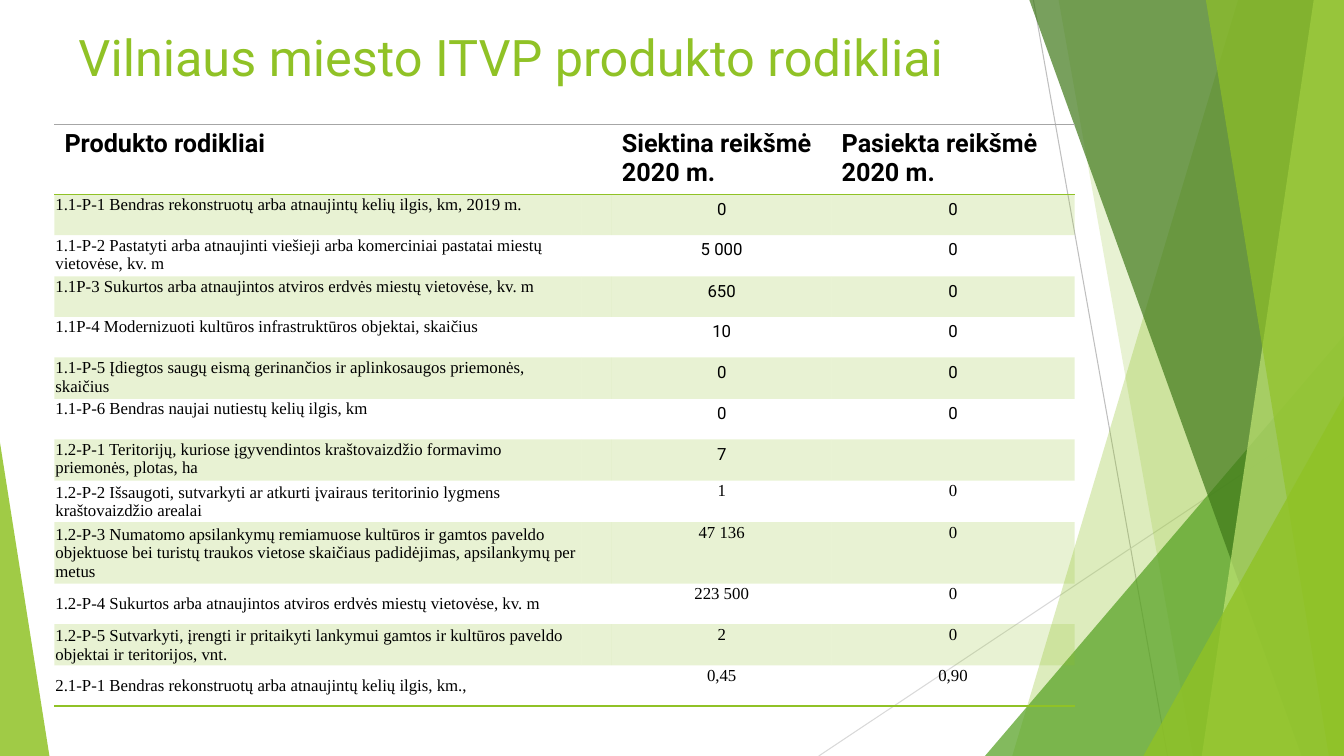
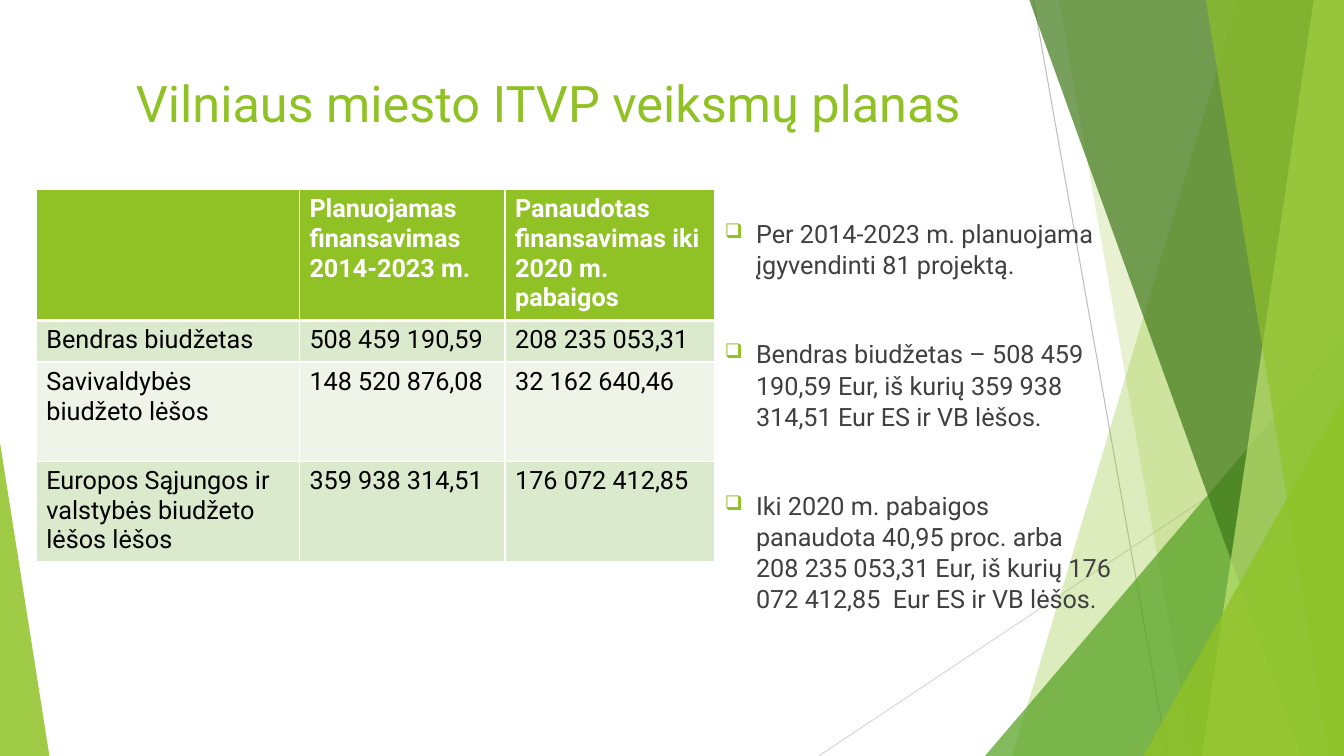
from lxml.etree import SubElement
from pptx import Presentation
from pptx.dml.color import RGBColor as Rgb
from pptx.enum.shapes import MSO_CONNECTOR as Connector, MSO_SHAPE as Preset
from pptx.enum.text import MSO_ANCHOR as Anchor, PP_ALIGN as Align
from pptx.oxml.ns import qn
from pptx.util import Inches, Pt

WIDTH, HEIGHT = Inches(13.33), Inches(7.5)
SANS, SERIF = "Roboto", "Times New Roman"
PLAIN_TABLE = "{2D5ABB26-0587-4C30-8999-92F81FD0307C}"
COLORS = {
    "lime": "90C226", "green": "54A021", "forest": "3F7819", "pale": "C0E474",
    "ray": "BFBFBF", "faint_ray": "D9D9D9", "rule": "A6A6A6",
    "body": "404040", "black": "000000", "white": "FFFFFF",
    "row_dark": "DBE9CD", "row_light": "EEF4E8",
}

INDICATOR_HEAD = ["Produkto rodikliai", "", "Siektina reikšmė 2020 m.", "Pasiekta reikšmė 2020 m."]
INDICATORS = [
    ("1.1-P-1 Bendras rekonstruotų arba atnaujintų kelių ilgis, km, 2019 m.", "0", "0"),
    ("1.1-P-2 Pastatyti arba atnaujinti viešieji arba komerciniai pastatai miestų vietovėse, kv. m", "5 000", "0"),
    ("1.1P-3 Sukurtos arba atnaujintos atviros erdvės miestų vietovėse, kv. m", "650", "0"),
    ("1.1P-4 Modernizuoti kultūros infrastruktūros objektai, skaičius", "10", "0"),
    ("1.1-P-5 Įdiegtos saugų eismą gerinančios ir aplinkosaugos priemonės, skaičius", "0", "0"),
    ("1.1-P-6 Bendras naujai nutiestų kelių ilgis, km", "0", "0"),
    ("1.2-P-1 Teritorijų, kuriose įgyvendintos kraštovaizdžio formavimo priemonės, plotas, ha", "7", ""),
    ("1.2-P-2 Išsaugoti, sutvarkyti ar atkurti įvairaus teritorinio lygmens kraštovaizdžio arealai", "1", "0"),
    ("1.2-P-3 Numatomo apsilankymų remiamuose kultūros ir gamtos paveldo objektuose bei turistų "
     "traukos vietose skaičiaus padidėjimas, apsilankymų per metus", "47 136", "0"),
    ("1.2-P-4 Sukurtos arba atnaujintos atviros erdvės miestų vietovėse, kv. m", "223 500", "0"),
    ("1.2-P-5 Sutvarkyti, įrengti ir pritaikyti lankymui gamtos ir kultūros paveldo objektai ir "
     "teritorijos, vnt.", "2", "0"),
    ("2.1-P-1 Bendras rekonstruotų arba atnaujintų kelių ilgis, km.,", "0,45", "0,90"),
]
SERIF_FROM, TALL_ROW = 8, 9

BUDGET = [
    ("", "Planuojamas finansavimas 2014-2023 m.", "Panaudotas finansavimas iki 2020 m. pabaigos"),
    ("Bendras biudžetas", "508 459 190,59", "208 235 053,31"),
    ("Savivaldybės biudžeto lėšos", "148 520 876,08", "32 162 640,46"),
    ("Europos Sąjungos ir valstybės biudžeto lėšos lėšos", "359 938 314,51", "176 072 412,85"),
]
FINDINGS = [
    "Per 2014-2023 m. planuojama įgyvendinti 81 projektą.",
    "Bendras biudžetas – 508 459 190,59 Eur, iš kurių 359 938 314,51 Eur ES ir VB lėšos.",
    "Iki 2020 m. pabaigos panaudota 40,95 proc. arba 208 235 053,31 Eur, iš kurių "
    "176 072 412,85  Eur ES ir VB lėšos.",
]


def across(percent):
    return round(WIDTH * percent / 100)


def down(percent):
    return round(HEIGHT * percent / 100)


def area(left, top, width, height):
    return across(left), down(top), across(width), down(height)


def color(name):
    return Rgb.from_string(COLORS[name])


def paint(fill, holder, name, opacity=100):
    fill.solid()
    fill.fore_color.rgb = color(name)
    if opacity < 100:
        tint = holder.find(qn("a:solidFill")).find(qn("a:srgbClr"))
        SubElement(tint, qn("a:alpha"), val=str(opacity * 1000))


def write(paragraph, text, size, name, font=SANS, bold=False):
    run = paragraph.add_run()
    run.text = text
    run.font.size, run.font.name, run.font.bold = Pt(size), font, bold
    run.font.color.rgb = color(name)


def facet(shape, name, opacity):
    shape.shadow.inherit = False
    shape.line.fill.background()
    paint(shape.fill, shape._element.spPr, name, opacity)


def ray(slide, start, end, name):
    line = slide.shapes.add_connector(
        Connector.STRAIGHT, across(start[0]), down(start[1]), across(end[0]), down(end[1]))
    line.line.color.rgb = color(name)
    line.line.width = Pt(0.75)
    SubElement(line._element.spPr, qn("a:effectLst"))


def band(slide, top_x, bottom_x, name, opacity):
    outline = slide.shapes.build_freeform(across(top_x), 0)
    outline.add_line_segments([(WIDTH, 0), (WIDTH, HEIGHT), (across(bottom_x), HEIGHT)], close=True)
    facet(outline.convert_to_shape(), name, opacity)


def corner(slide, left, top, width, apex, name, opacity):
    wedge = slide.shapes.add_shape(Preset.ISOSCELES_TRIANGLE, *area(left, top, width, 100 - top))
    wedge.adjustments[0] = apex
    facet(wedge, name, opacity)


def draw_backdrop(slide):
    ray(slide, (76.89, 0), (86.87, 100), "ray")
    ray(slide, (100, 53.73), (60.92, 100), "faint_ray")
    band(slide, 92.12, 75.32, "lime", 30)
    band(slide, 78.77, 88.75, "lime", 20)
    corner(slide, 73.29, 44.4, 26.71, 1, "green", 72)
    band(slide, 76.59, 96.85, "forest", 70)
    band(slide, 97.75, 89.42, "pale", 70)
    band(slide, 89.72, 98.87, "lime", 65)
    corner(slide, 85.07, 52.4, 14.93, 1, "lime", 80)
    corner(slide, 0, 58.53, 3.68, 0, "lime", 85)


def text_frame(slide, box):
    frame = slide.shapes.add_textbox(*area(*box)).text_frame
    frame.word_wrap = True
    return frame


def titled_slide(deck, title, box, align=Align.LEFT):
    slide = deck.slides.add_slide(deck.slide_layouts[6])
    draw_backdrop(slide)
    heading = text_frame(slide, box).paragraphs[0]
    heading.alignment = align
    write(heading, title, 36, "lime")
    return slide


def plain_table(slide, left, top, columns, rows):
    table = slide.shapes.add_table(
        len(rows), len(columns), *area(left, top, sum(columns), sum(rows))).table
    table._tbl.tblPr.find(qn("a:tableStyleId")).text = PLAIN_TABLE
    for column, share in zip(table.columns, columns):
        column.width = across(share)
    for row, share in zip(table.rows, rows):
        row.height = down(share)
    return table


def set_margins(cell, side, bottom):
    cell.margin_left = cell.margin_right = cell.margin_top = Inches(side)
    cell.margin_bottom = Inches(bottom)


def edge(cell, side, name, points):
    line = SubElement(cell._tc.get_or_add_tcPr(), qn("a:ln" + side), w=str(Pt(points)))
    SubElement(SubElement(line, qn("a:solidFill")), qn("a:srgbClr"), val=COLORS[name])


def fill_cell(cell, text, size, name="black", font=SANS, bold=False, align=Align.LEFT):
    if not text:
        set_margins(cell, 0, 0)
        return
    paragraph = cell.text_frame.paragraphs[0]
    paragraph.alignment = align
    write(paragraph, text, size, name, font, bold)


def indicator_table(slide):
    heights = [9.2] + [7.54 if i == TALL_ROW else 5.36 for i in range(1, len(INDICATORS) + 1)]
    table = plain_table(slide, 4.05, 16.4, [39.23, 2.25, 16.35, 18.08], heights)
    for c, text in enumerate(INDICATOR_HEAD):
        head = table.cell(0, c)
        edge(head, "T", "rule", 0.75)
        edge(head, "B", "lime", 1)
        fill_cell(head, text, 18, bold=True)
    for r, (label, target, reached) in enumerate(INDICATORS, 1):
        for c, text in enumerate((label, "", target, reached)):
            cell = table.cell(r, c)
            serif = c == 0 or r >= SERIF_FROM
            if serif:
                set_margins(cell, 0.01, 0)
            if c == 0 and r >= SERIF_FROM:
                cell.vertical_anchor = Anchor.MIDDLE
            fill_cell(cell, text, 12, font=SERIF if serif else SANS,
                      align=Align.CENTER if c else Align.LEFT)
            if r == len(INDICATORS):
                edge(cell, "B", "lime", 1)
            if r % 2:
                paint(cell.fill, cell._tc.tcPr, "lime", 20)


def budget_table(slide):
    table = plain_table(slide, 2.7, 25.07, [19.58, 15.3, 15.6], [16.8, 5.49, 13.1, 13.1])
    for r, entries in enumerate(BUDGET):
        head = r == 0
        shade = "lime" if head else "row_dark" if r % 2 else "row_light"
        for c, text in enumerate(entries):
            cell = table.cell(r, c)
            fill_cell(cell, text, 18, "white" if head else "black", bold=head)
            for side in "LRTB":
                thick = (head and side == "B") or (r == 1 and side == "T")
                edge(cell, side, "white", 3 if thick else 1)
            paint(cell.fill, cell._tc.tcPr, shade)


def bullet(paragraph):
    props = paragraph._p.get_or_add_pPr()
    props.set("marL", str(Inches(0.31)))
    props.set("indent", str(-Inches(0.31)))
    SubElement(SubElement(props, qn("a:buClr")), qn("a:srgbClr"), val=COLORS["lime"])
    SubElement(props, qn("a:buSzPct"), val="80000")
    SubElement(props, qn("a:buChar"), char="❑")


def findings_list(slide):
    frame = text_frame(slide, (53.19, 28.13, 30.23, 58.53))
    for i, text in enumerate(FINDINGS):
        finding = frame.add_paragraph() if i else frame.paragraphs[0]
        finding.line_spacing = 1.03
        finding.space_before = Pt(41.5 if i else 0)
        bullet(finding)
        write(finding, text, 18, "body")


def main():
    deck = Presentation()
    deck.slide_width, deck.slide_height = WIDTH, HEIGHT
    indicators = titled_slide(deck, "Vilniaus miesto ITVP produkto rodikliai", (5.1, 2.8, 70.52, 15.87))
    indicator_table(indicators)
    plan = titled_slide(deck, "Vilniaus miesto ITVP veiksmų planas", (5.55, 8.93, 70.52, 19.2), Align.CENTER)
    findings_list(plan)
    budget_table(plan)
    deck.save("out.pptx")


if __name__ == "__main__":
    main()
